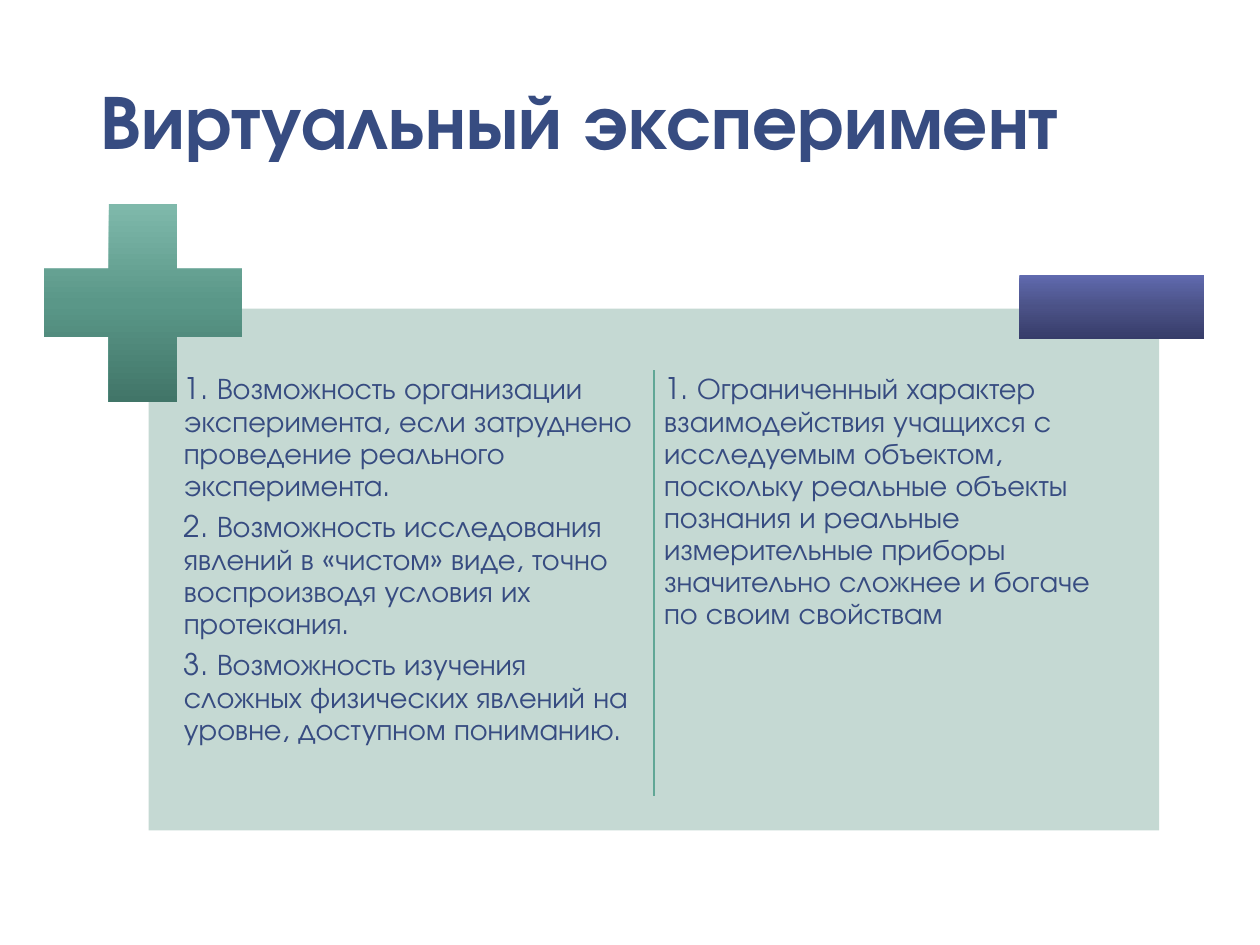
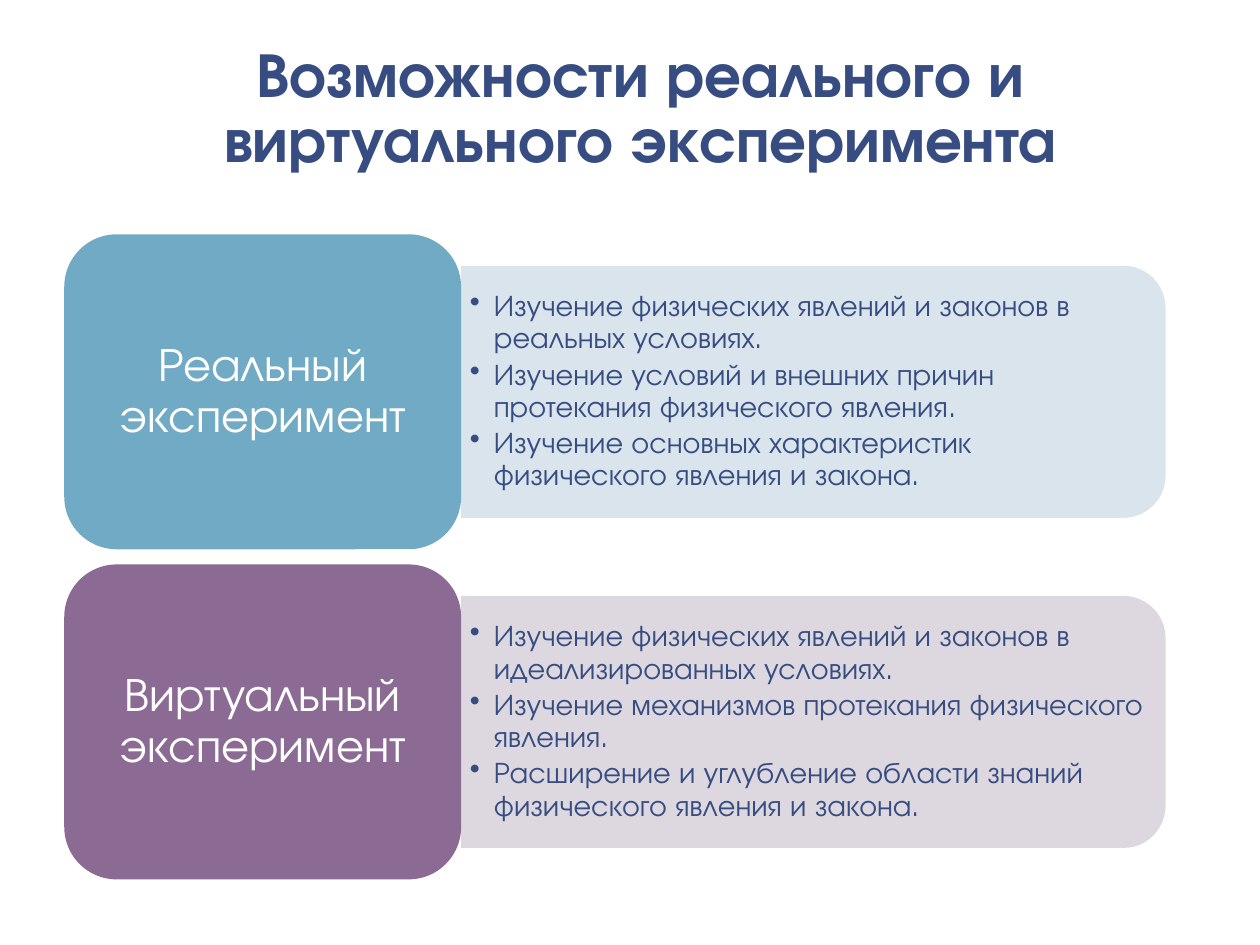
import copy
import pptx
import pptx.util
import pptx.dml.color
import pptx.enum.shapes
import pptx.enum.text
import pptx.oxml.ns
import pptx.oxml.xmlchemy

Inches = pptx.util.Inches
Pt = pptx.util.Pt
RGB = pptx.dml.color.RGBColor.from_string
Shape = pptx.enum.shapes.MSO_SHAPE
Anchor = pptx.enum.text.MSO_ANCHOR
Align = pptx.enum.text.PP_ALIGN
qn = pptx.oxml.ns.qn
Element = pptx.oxml.xmlchemy.OxmlElement

FONT = "TeX Gyre Adventor"
COLORS = {
    "ink": "374C81", "white": "FFFFFF", "panel": "C5D9D3", "rule": "61A796",
    "blue": "70AAC4", "blue_pale": "D5E2EA",
    "plum": "8B6A94", "plum_pale": "DAD4DC",
}
PLUS_FADE = ["7FB9AB", "5A9788", "417568"]
MINUS_FADE = ["606AAF", "4B5287", "363C69"]

PROS_TITLE = "Виртуальный эксперимент"
PROS = [
    "1. Возможность организации эксперимента, если затруднено проведение реального эксперимента.",
    "2. Возможность исследования явлений в «чистом» виде, точно воспроизводя условия их протекания.",
    "3. Возможность изучения сложных физических явлений на уровне, доступном пониманию.",
]
CONS = [
    "1. Ограниченный характер взаимодействия учащихся с исследуемым объектом, "
    "поскольку реальные объекты познания и реальные измерительные приборы "
    "значительно сложнее и богаче по своим свойствам",
]

ROWS_TITLE = "Возможности реального и виртуального эксперимента"
ROWS = [
    ("Реальный эксперимент", "blue", [
        "Изучение физических явлений и законов в реальных условиях.",
        "Изучение условий и внешних причин протекания физического явления.",
        "Изучение основных характеристик физического явления и закона.",
    ]),
    ("Виртуальный эксперимент", "plum", [
        "Изучение физических явлений и законов в идеализированных условиях.",
        "Изучение механизмов протекания физического явления.",
        "Расширение и углубление области знаний физического явления и закона.",
    ]),
]


def place(box):
    return [Inches(v) for v in box]


def write(frame, lines, size, color="ink", bold=False, align=Align.LEFT,
          anchor=Anchor.TOP, inset=(0.04, 0.04), spacing=0.9, after=0, bullet=False):
    frame.word_wrap = True
    frame.auto_size = pptx.enum.text.MSO_AUTO_SIZE.NONE
    frame.vertical_anchor = anchor
    frame.margin_left = frame.margin_right = Inches(inset[0])
    frame.margin_top = frame.margin_bottom = Inches(inset[1])
    frame.text = "\n".join(lines)
    for par in frame.paragraphs:
        if bullet:
            add_bullet(par)
        par.alignment = align
        par.line_spacing = spacing
        par.space_before = Pt(0)
        par.space_after = Pt(after)
        for run in par.runs:
            run.font.name = FONT
            run.font.size = Pt(size)
            run.font.bold = bold
            run.font.color.rgb = RGB(COLORS[color])


def add_bullet(par):
    props = par._p.get_or_add_pPr()
    props.set("marL", str(Inches(0.19)))
    props.set("indent", str(-Inches(0.19)))
    mark = Element("a:buChar")
    mark.set("char", "•")
    props.append(mark)


def add_text(slide, box, lines, size, **style):
    write(slide.shapes.add_textbox(*place(box)).text_frame, lines, size, **style)


def add_block(slide, kind, box, color=None):
    block = slide.shapes.add_shape(kind, *place(box))
    block.shadow.inherit = False
    block.line.fill.background()
    if color:
        block.fill.solid()
        block.fill.fore_color.rgb = RGB(COLORS[color])
    return block


def fade(block, tones):
    """Fill a block from top to bottom with three evenly spaced tones."""
    block.fill.gradient()
    block.fill.gradient_angle = 270
    stops = block._element.spPr.find(qn("a:gradFill")).find(qn("a:gsLst"))
    stops.insert(1, copy.deepcopy(stops[0]))
    for i, (stop, tone) in enumerate(zip(block.fill.gradient_stops, tones)):
        stop.position = i / 2
        stop.color.rgb = RGB(tone)


def soften(block, percent):
    """Make a solid fill partly see-through."""
    alpha = Element("a:alpha")
    alpha.set("val", str(percent * 1000))
    block._element.spPr.find(qn("a:solidFill"))[0].append(alpha)


def add_slide(deck, title, box, size, align):
    slide = deck.slides.add_slide(deck.slide_layouts[5])
    head = slide.shapes.title
    head.left, head.top, head.width, head.height = place(box)
    write(head.text_frame, [title], size, bold=True, align=align,
          anchor=Anchor.BOTTOM, inset=(0.13, 0.07), spacing=0.85)
    return slide


def draw_pros(deck):
    slide = add_slide(deck, PROS_TITLE, (0.67, 0.08, 8.82, 1.3), 44, Align.LEFT)
    add_block(slide, Shape.RECTANGLE, (1.18, 2.45, 8.02, 4.14), "panel")
    for left, lines in ((1.42, PROS), (5.23, CONS)):
        add_text(slide, (left, 2.93, 3.72, 3.54), lines, 17, after=5.4)
    plus = add_block(slide, Shape.CROSS, (0.35, 1.62, 1.57, 1.57))
    plus.adjustments[0] = 0.328
    fade(plus, PLUS_FADE)
    fade(add_block(slide, Shape.RECTANGLE, (8.09, 2.18, 1.47, 0.51)), MINUS_FADE)
    rule = slide.shapes.add_connector(pptx.enum.shapes.MSO_CONNECTOR.STRAIGHT,
                                      *place((5.19, 2.94, 5.19, 6.32)))
    rule.line.color.rgb = RGB(COLORS["rule"])
    rule.line.width = Pt(1)
    rule._element.spPr.append(Element("a:effectLst"))


def draw_rows(deck):
    slide = add_slide(deck, ROWS_TITLE, (0.92, 0.08, 8.33, 1.38), 36, Align.CENTER)
    left, top, step = 0.51, 1.86, 2.62
    label_w, label_h = 3.15, 2.5
    band_w, band_h = 5.59, 2
    edge = left + label_w
    for i, (name, color, points) in enumerate(ROWS):
        y = top + i * step
        mid = y + label_h / 2
        # The band stands upright before its quarter turn.
        band = add_block(slide, Shape.ROUND_2_SAME_RECTANGLE,
                         (edge + (band_w - band_h) / 2, mid - band_w / 2, band_h, band_w),
                         color + "_pale")
        band.rotation = 90
        soften(band, 90)
        add_text(slide, (edge, mid - 0.9, 5.5, 1.8), points, 17, anchor=Anchor.MIDDLE,
                 inset=(0.07, 0.04), after=2.4, bullet=True)
        label = add_block(slide, Shape.ROUNDED_RECTANGLE, (left, y, label_w, label_h), color)
        write(label.text_frame, [name], 27, color="white", align=Align.CENTER,
              anchor=Anchor.MIDDLE, inset=(0.11, 0.06))


def main():
    deck = pptx.Presentation()
    deck.slide_width, deck.slide_height = Inches(10), Inches(7.5)
    draw_pros(deck)
    draw_rows(deck)
    deck.save("out.pptx")


if __name__ == "__main__":
    main()
